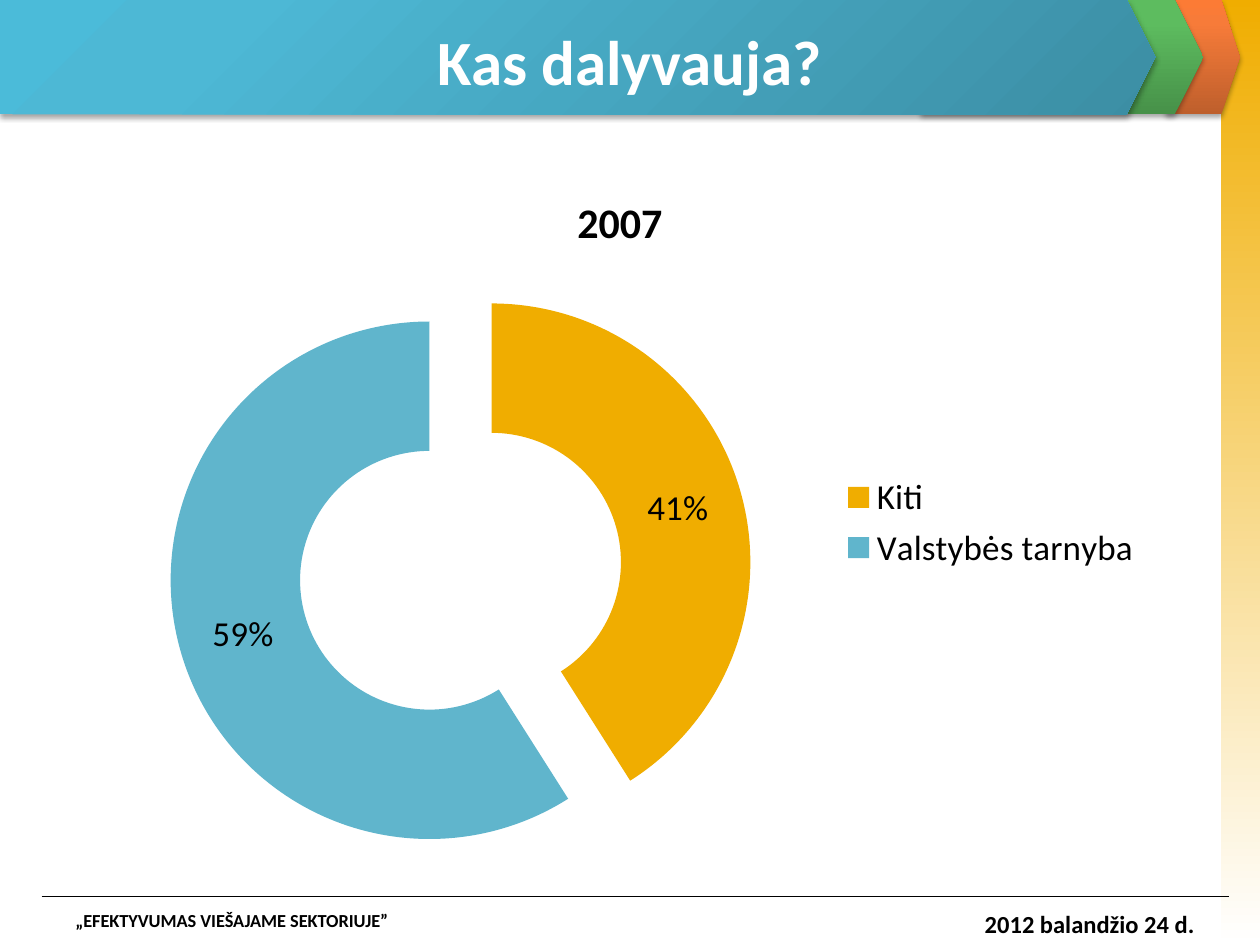
from lxml import etree
from pptx import Presentation
from pptx.chart.data import CategoryChartData
from pptx.dml.color import RGBColor
from pptx.enum.chart import XL_CHART_TYPE as ChartType, XL_LEGEND_POSITION as LegendPosition
from pptx.enum.shapes import MSO_CONNECTOR as Connector, MSO_SHAPE as Shape
from pptx.enum.text import MSO_ANCHOR as Anchor, PP_ALIGN as Align
from pptx.oxml import parse_xml
from pptx.oxml.ns import nsdecls, qn
from pptx.util import Inches, Pt

WIDTH, HEIGHT = 10, 7.5
FONT, BLACK, WHITE = "Calibri", "000000", "FFFFFF"
YELLOW, BLUE = "F0AD00", "60B5CC"


def color(value):
    return RGBColor.from_string(value)


def place(box):
    """Turn shares of the slide into left, top, width and height."""
    return [Inches(share * size) for share, size in zip(box, (WIDTH, HEIGHT) * 2)]


def style_font(font, size, bold=False, value=BLACK):
    font.name, font.size, font.bold = FONT, Pt(size), bold
    font.color.rgb = color(value)


def add_gradient_shape(slide, kind, box, stops, direction, shadow=False):
    shape = slide.shapes.add_shape(kind, *place(box))
    shape.line.fill.background()
    stop_xml = "".join(
        f'<a:gs pos="{position * 1000}"><a:srgbClr val="{value}"/></a:gs>'
        for position, value in stops)
    properties = shape.element.spPr
    properties.find(qn("a:prstGeom")).addnext(parse_xml(
        f'<a:gradFill {nsdecls("a")} rotWithShape="1"><a:gsLst>{stop_xml}</a:gsLst>'
        f'{direction}</a:gradFill>'))
    shape.shadow.inherit = False
    if shadow:
        properties.find(qn("a:effectLst")).append(parse_xml(
            f'<a:outerShdw {nsdecls("a")} blurRad="{Pt(3.1)}" dist="{Pt(1.8)}" '
            'dir="5400000" rotWithShape="0"><a:srgbClr val="000000">'
            '<a:alpha val="35000"/></a:srgbClr></a:outerShdw>'))
    return shape


def add_text(slide, box, text, size, align=Align.LEFT, value=BLACK, anchor=Anchor.TOP):
    frame = slide.shapes.add_textbox(*place(box)).text_frame
    frame.word_wrap, frame.vertical_anchor = True, anchor
    paragraph = frame.paragraphs[0]
    paragraph.alignment = align
    run = paragraph.add_run()
    run.text = text
    style_font(run.font, size, True, value)


def add_side_strip(slide, box):
    add_gradient_shape(slide, Shape.RECTANGLE, box, [(0, YELLOW), (100, WHITE)],
                       '<a:lin ang="5400000" scaled="0"/>')


def add_header(slide, box, title):
    left, top, width, height = box
    upward = '<a:lin ang="16200000" scaled="0"/>'
    from_corner = '<a:path path="circle"><a:fillToRect l="100000" t="100000"/></a:path>'
    # Arrows from back to front: start, length, dark to light colours
    arrows = [
        (0.925, 0.059, ("BE5F2C", "F77B39", "FC7B35"), upward),
        (0.731, 0.224, ("479149", "5DBC5F", "5BBF5E"), upward),
        (0, 0.917, ("3C8EA4", "4DB8D5", "4BBBD9"), from_corner),
    ]
    for start, length, shades, direction in arrows:
        arrow = add_gradient_shape(
            slide, Shape.PENTAGON, (left + start * width, top, length * width, height),
            list(zip((0, 80, 100), shades)), direction, shadow=True)
        arrow.adjustments[0] = 0.25
    add_text(slide, (left + 0.05 * width, top + 0.15 * height, 0.9 * width, 0.76 * height),
             title, 36, Align.CENTER, WHITE, Anchor.MIDDLE)


def add_footer(slide, box, event, date):
    left, top, width, height = box
    x, y, length, _ = place((left + 0.033 * width, top, 0.942 * width, 0))
    rule = slide.shapes.add_connector(Connector.STRAIGHT, x, y, x + length, y)
    rule.line.color.rgb, rule.line.width = color(BLACK), Pt(0.75)
    etree.SubElement(rule.element.spPr, qn("a:effectLst"))
    text_top, text_height = top + 0.13 * height, 0.87 * height
    add_text(slide, (left + 0.05 * width, text_top, 0.6 * width, text_height), event, 10.5)
    add_text(slide, (left + 0.736 * width, text_top, 0.222 * width, text_height),
             date, 14, Align.RIGHT)


def add_share_chart(slide, box, title, shares):
    data = CategoryChartData()
    data.categories = list(shares)
    data.add_series(title, list(shares.values()))
    chart = slide.shapes.add_chart(ChartType.DOUGHNUT_EXPLODED, *place(box), data).chart
    style_font(chart.font, 20)
    # Title and legend
    chart.has_title = True
    run = chart.chart_title.text_frame.paragraphs[0].add_run()
    run.text = title
    style_font(run.font, 24, True)
    chart.has_legend = True
    chart.legend.position = LegendPosition.RIGHT
    chart.legend.include_in_layout = False
    style_font(chart.legend.font, 20)
    # Slices and percentages
    plot = chart.plots[0]
    plot.vary_by_categories = True
    for index, value in enumerate((YELLOW, BLUE)):
        fill = plot.series[0].points[index].format.fill
        fill.solid()
        fill.fore_color.rgb = color(value)
    plot.has_data_labels = True
    labels = plot.data_labels
    labels.show_percentage, labels.show_value = True, False
    labels.number_format, labels.number_format_is_linked = "0%", False
    style_font(labels.font, 20)


def main():
    presentation = Presentation()
    presentation.slide_width, presentation.slide_height = Inches(WIDTH), Inches(HEIGHT)
    slide = presentation.slides.add_slide(presentation.slide_layouts[6])
    add_side_strip(slide, (0.969, 0, 0.031, 1))
    add_header(slide, (0, 0, 1, 0.121), "Kas dalyvauja?")
    add_footer(slide, (0, 0.949, 1, 0.051),
               "„EFEKTYVUMAS VIEŠAJAME SEKTORIUJE”", "2012 balandžio 24 d.")
    add_share_chart(slide, (0.067, 0.175, 0.85, 0.756), "2007",
                    {"Kiti": 41, "Valstybės tarnyba": 59})
    presentation.save("out.pptx")


if __name__ == "__main__":
    main()
